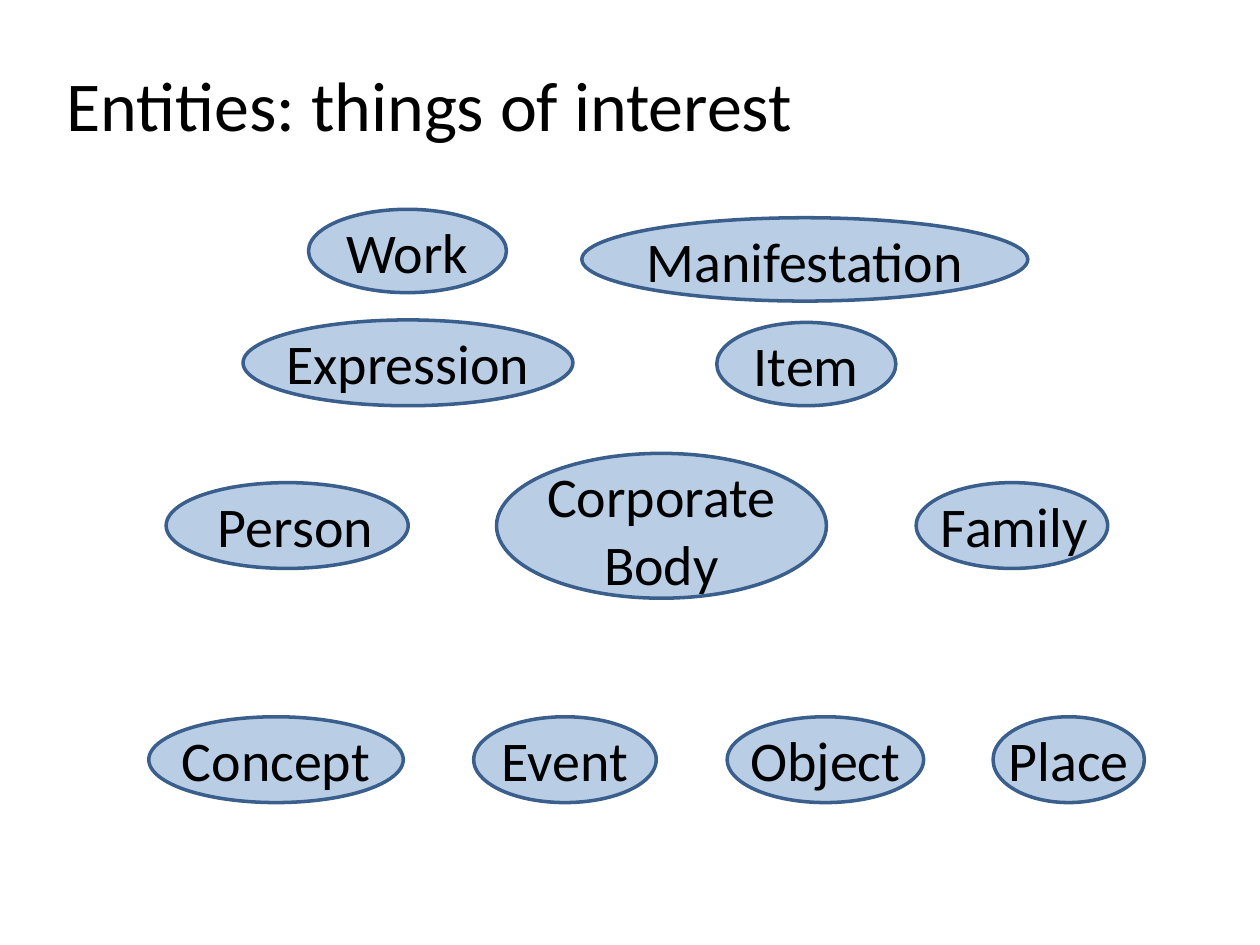
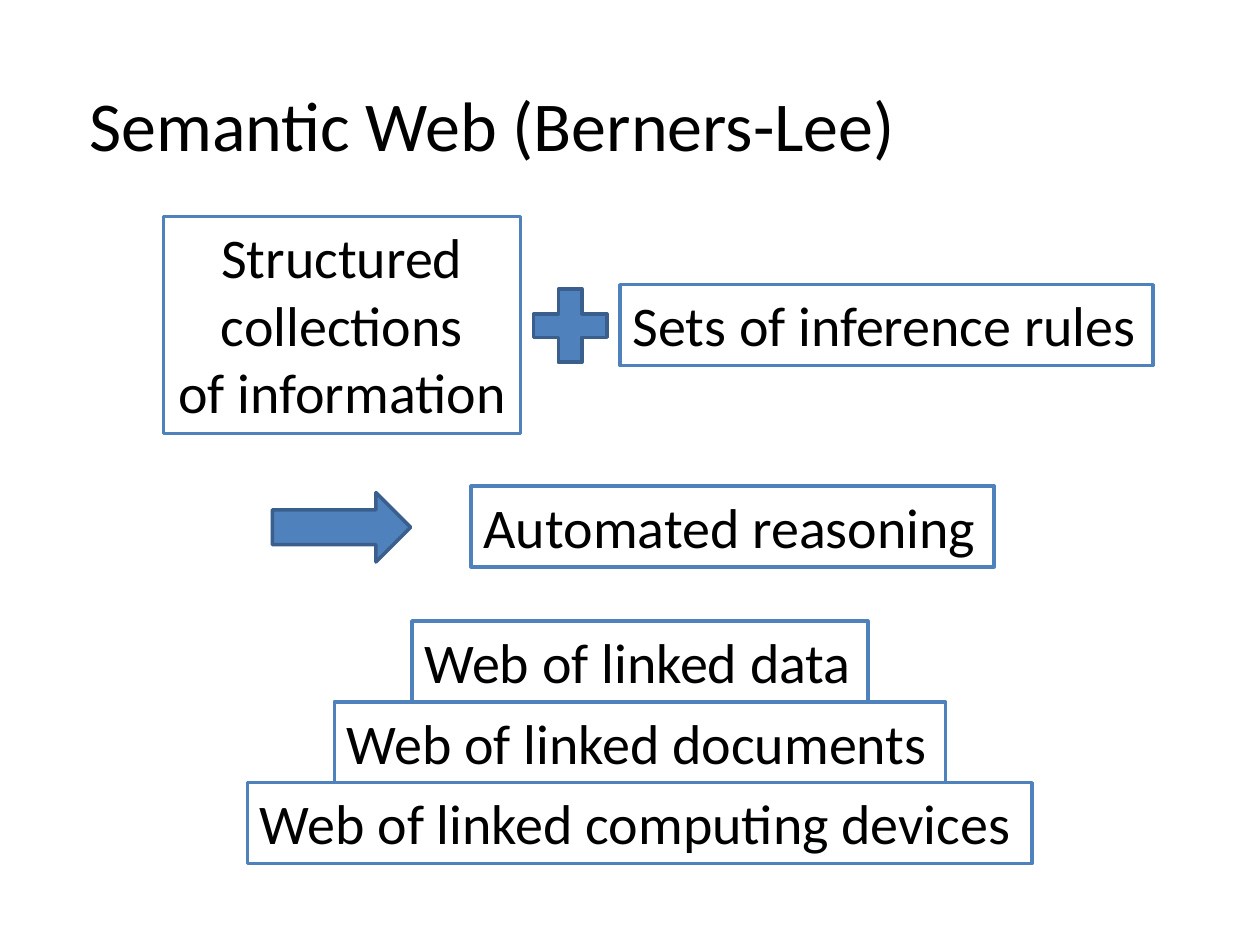
from dataclasses import dataclass

from pptx import Presentation
from pptx.dml.color import RGBColor
from pptx.enum.shapes import MSO_SHAPE as Preset
from pptx.enum.text import MSO_ANCHOR as Anchor, MSO_AUTO_SIZE as AutoSize, PP_ALIGN as Align
from pptx.shapes.base import BaseShape
from pptx.slide import Slide
from pptx.util import Cm, Pt

COLOURS = {
    "text": "000000",
    "bubble": "B9CDE5",
    "outline": "3A5F8C",
    "accent": "4F81BD",
}
FONT = {"name": "Calibri", "bold": False}
FRAME = {
    "word_wrap": True,
    "auto_size": AutoSize.SHAPE_TO_FIT_TEXT,
    "vertical_anchor": Anchor.TOP,
}
NO_MARGINS = {f"margin_{side}": 0 for side in ("left", "top", "right", "bottom")}
TITLE_SIZE, BODY_SIZE = 40, 32
LINE_HEIGHT = 1.37
LABEL_OFFSET = 0.17
BOX_HEIGHT = 1.63
STACK_CENTRE, STACK_TOP = 12.9, 12.52


@dataclass
class Area:
    left: float
    top: float
    width: float
    height: float

    def lengths(self) -> tuple[Cm, Cm, Cm, Cm]:
        return Cm(self.left), Cm(self.top), Cm(self.width), Cm(self.height)


@dataclass
class Entity:
    label: str
    area: Area
    label_width: float
    label_shift: float = 0
    label_lines: int = 1


@dataclass
class Box:
    lines: list[str]
    area: Area
    alignment: Align = Align.LEFT


@dataclass
class Symbol:
    preset: Preset
    area: Area


ENTITIES = [
    Entity("Work", Area(6.22, 4.22, 3.99, 1.68), 3.2),
    Entity("Expression", Area(4.9, 6.45, 6.65, 1.73), 5.33),
    Entity("Manifestation", Area(11.73, 4.39, 8.99, 1.68), 7.19),
    Entity("Item", Area(14.45, 6.5, 3.61, 1.68), 2.87),
    Entity("Person", Area(3.35, 9.73, 4.88, 1.73), 3.89, label_shift=0.17),
    Entity("Corporate Body", Area(10.01, 9.14, 6.65, 2.92), 5.33, label_lines=2),
    Entity("Family", Area(18.47, 9.73, 3.86, 1.73), 3.76, label_shift=0.05),
    Entity("Concept", Area(3, 14.45, 5.13, 1.73), 4.72),
    Entity("Event", Area(9.55, 14.45, 3.68, 1.73), 3.23),
    Entity("Object", Area(14.66, 14.45, 3.96, 1.73), 3.96),
    Entity("Place", Area(20.02, 14.45, 3.05, 1.73), 3.05),
]
WEB_LAYERS = [
    ("Web of linked data", 9.19),
    ("Web of linked documents", 12.32),
    ("Web of linked computing devices", 15.82),
]
BOXES = [
    Box(["Structured", "collections", "of information"], Area(3.3, 4.37, 7.19, 4.37), Align.CENTER),
    Box(["Sets of inference rules"], Area(12.5, 5.74, 10.74, BOX_HEIGHT)),
    Box(["Automated reasoning"], Area(9.5, 9.8, 10.54, BOX_HEIGHT)),
] + [
    Box([label], Area(STACK_CENTRE - width / 2, STACK_TOP + row * BOX_HEIGHT, width, BOX_HEIGHT))
    for row, (label, width) in enumerate(WEB_LAYERS)
]
SYMBOLS = [
    Symbol(Preset.MATH_PLUS, Area(10.49, 5.56, 2.01, 2.01)),
    Symbol(Preset.RIGHT_ARROW, Area(5.49, 9.93, 2.79, 1.4)),
]


def colour(name: str) -> RGBColor:
    return RGBColor.from_string(COLOURS[name])


def apply(target: object, values: dict) -> None:
    for name, value in values.items():
        setattr(target, name, value)


def outline(shape: BaseShape, line_colour: str) -> None:
    shape.line.color.rgb = colour(line_colour)
    shape.line.width = Pt(2)


def add_text(shapes, lines: list[str], area: Area, size: int = BODY_SIZE,
             alignment: Align = Align.LEFT, margins: dict | None = None) -> BaseShape:
    shape = shapes.add_textbox(*area.lengths())
    frame = shape.text_frame
    apply(frame, FRAME | (margins or {}))
    frame.text = "\n".join(lines)
    for paragraph in frame.paragraphs:
        paragraph.alignment = alignment
        apply(paragraph.font, FONT | {"size": Pt(size)})
        paragraph.font.color.rgb = colour("text")
    return shape


def add_preset(shapes, preset: Preset, area: Area, fill: str) -> None:
    shape = shapes.add_shape(preset, *area.lengths())
    shape.shadow.inherit = False
    shape.fill.solid()
    shape.fill.fore_color.rgb = colour(fill)
    outline(shape, "outline")


def add_entity(slide: Slide, entity: Entity) -> None:
    group = slide.shapes.add_group_shape()
    area = entity.area
    add_preset(group.shapes, Preset.OVAL, area, "bubble")
    left = area.left + (area.width - entity.label_width) / 2 + entity.label_shift
    label_area = Area(left, area.top + LABEL_OFFSET, entity.label_width, LINE_HEIGHT * entity.label_lines)
    add_text(group.shapes, [entity.label], label_area, alignment=Align.CENTER, margins=NO_MARGINS)


def add_titled_slide(presentation, title: str, area: Area) -> Slide:
    slide = presentation.slides.add_slide(presentation.slide_layouts[6])
    add_text(slide.shapes, [title], area, TITLE_SIZE)
    return slide


def main() -> None:
    presentation = Presentation()
    apply(presentation, {"slide_width": Cm(25.4), "slide_height": Cm(19.05)})

    entities_slide = add_titled_slide(
        presentation, "Entities: things of interest", Area(1.09, 1.12, 15.32, 1.96))
    for entity in ENTITIES:
        add_entity(entities_slide, entity)

    web_slide = add_titled_slide(
        presentation, "Semantic Web (Berners-Lee)", Area(1.55, 1.52, 16.94, 1.96))
    for box in BOXES:
        shape = add_text(web_slide.shapes, box.lines, box.area, alignment=box.alignment)
        outline(shape, "accent")
    for symbol in SYMBOLS:
        add_preset(web_slide.shapes, symbol.preset, symbol.area, "accent")

    presentation.save("out.pptx")


if __name__ == "__main__":
    main()
